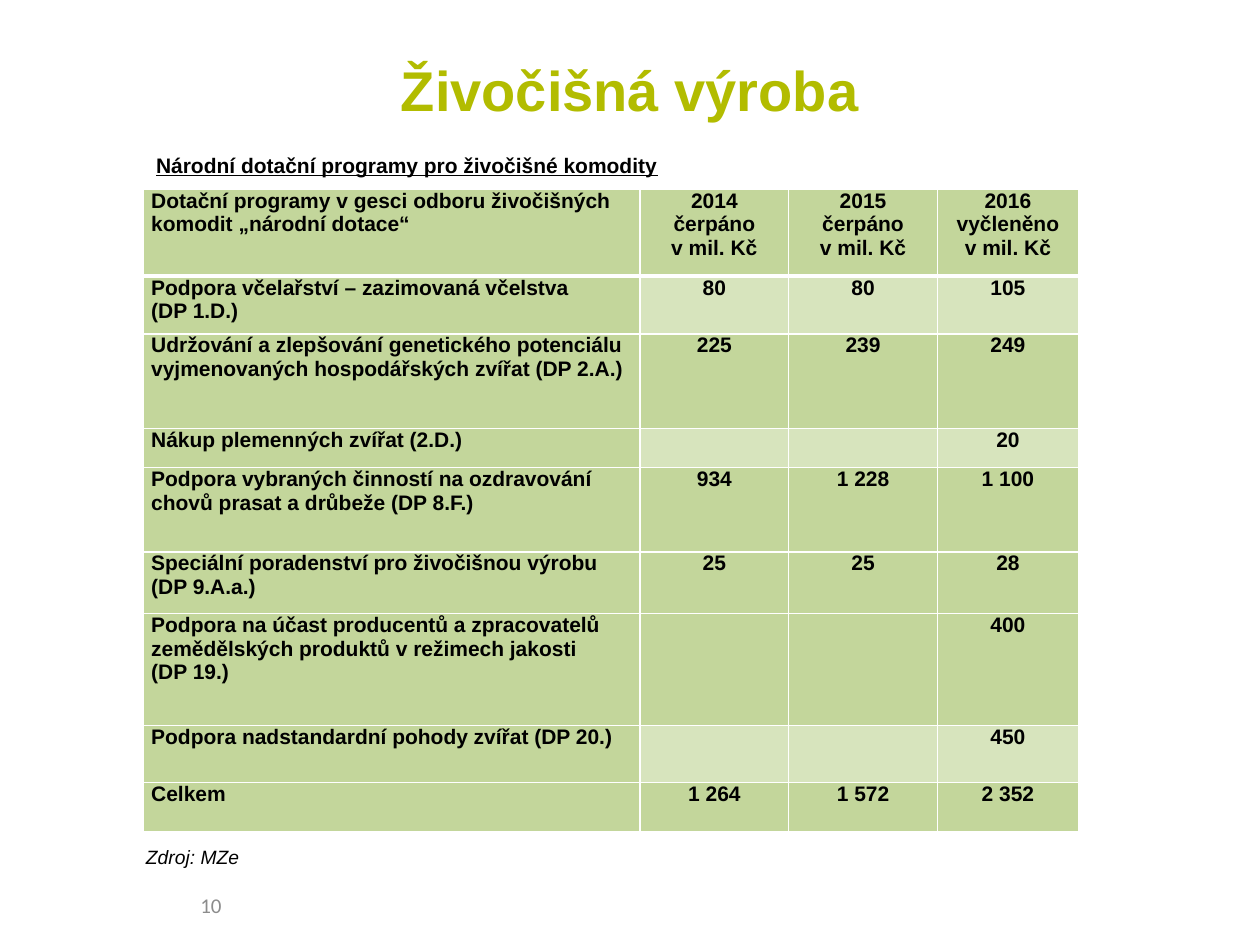
from dataclasses import dataclass

from lxml import etree
from pptx import Presentation
from pptx.dml.color import RGBColor
from pptx.enum.text import MSO_ANCHOR, PP_ALIGN
from pptx.oxml.ns import qn
from pptx.util import Inches, Pt

LEFT, CENTER = PP_ALIGN.LEFT, PP_ALIGN.CENTER
TOP, MIDDLE = MSO_ANCHOR.TOP, MSO_ANCHOR.MIDDLE

COLORS = {
    "title": "B2BC00",
    "text": "000000",
    "number": "8C8C8C",
    "green": "C3D69B",
    "pale": "D7E4BD",
    "line": "FFFFFF",
}


@dataclass
class Style:
    size: float
    color: str = "text"
    face: str = "Arial"
    bold: bool = False
    italic: bool = False
    under: bool = False


@dataclass
class Label:
    text: str
    box: tuple[float, float, float, float]
    style: Style
    align: PP_ALIGN = LEFT
    anchor: MSO_ANCHOR = MIDDLE


@dataclass
class Row:
    height: float
    cells: tuple[str, str, str, str]
    pale: bool = False


BODY = Style(12, bold=True)

LABELS = [
    Label("Živočišná výroba", (0.5, 0.3, 9, 0.82),
          Style(32, "title", bold=True), CENTER),
    Label("Národní dotační programy pro živočišné komodity",
          (1.14, 1.16, 4.41, 0.3), Style(12, bold=True, under=True)),
    Label("Zdroj: MZe", (1.06, 6.66, 1.42, 0.29),
          Style(11, italic=True), anchor=TOP),
    Label("10", (0.51, 6.98, 2.33, 0.4),
          Style(12, "number", "Calibri"), CENTER),
]

WIDTHS = [3.94, 1.18, 1.18, 1.12]
ROWS = [
    Row(0.69, ("Dotační programy v gesci odboru živočišných komodit „národní dotace“",
               "2014\nčerpáno\nv mil. Kč", "2015\nčerpáno\nv mil. Kč",
               "2016\nvyčleněno\nv mil. Kč")),
    Row(0.46, ("Podpora včelařství – zazimovaná včelstva\n(DP 1.D.)",
               "80", "80", "105"), True),
    Row(0.75, ("Udržování a zlepšování genetického potenciálu "
               "vyjmenovaných hospodářských zvířat (DP 2.A.)",
               "225", "239", "249")),
    Row(0.31, ("Nákup plemenných zvířat (2.D.)", "", "", "20"), True),
    Row(0.67, ("Podpora vybraných činností na ozdravování chovů "
               "prasat a drůbeže (DP 8.F.)", "934", "1 228", "1 100")),
    Row(0.49, ("Speciální poradenství pro živočišnou výrobu\n(DP 9.A.a.)",
               "25", "25", "28")),
    Row(0.89, ("Podpora na účast producentů a zpracovatelů zemědělských "
               "produktů v režimech jakosti\n(DP 19.)", "", "", "400")),
    Row(0.45, ("Podpora nadstandardní pohody zvířat (DP 20.)",
               "", "", "450"), True),
    Row(0.39, ("Celkem", "1 264", "1 572", "2 352")),
]


def style_font(font, style: Style) -> None:
    font.size = Pt(style.size)
    font.name = style.face
    font.bold = style.bold
    font.italic = style.italic
    font.underline = style.under
    font.color.rgb = RGBColor.from_string(COLORS[style.color])


def write(frame, text: str, style: Style, align: PP_ALIGN) -> None:
    frame.word_wrap = True
    for i, line in enumerate(text.split("\n")):
        para = frame.add_paragraph() if i else frame.paragraphs[0]
        para.alignment = align
        if line:
            run = para.add_run()
            run.text = line
            style_font(run.font, style)
        else:
            # An empty cell keeps the body size so its row does not grow
            end = etree.SubElement(para._p, qn("a:endParaRPr"))
            end.set("sz", str(int(style.size * 100)))


def add_label(slide, label: Label) -> None:
    box = slide.shapes.add_textbox(*map(Inches, label.box))
    box.text_frame.vertical_anchor = label.anchor
    write(box.text_frame, label.text, label.style, label.align)


def add_edges(cell, base: float, top: float) -> None:
    props = cell._tc.get_or_add_tcPr()
    widths = {"lnL": 1, "lnR": 1, "lnT": top, "lnB": base}
    for i, (tag, width) in enumerate(widths.items()):
        line = etree.Element(qn(f"a:{tag}"), w=str(Pt(width)))
        fill = etree.SubElement(line, qn("a:solidFill"))
        etree.SubElement(fill, qn("a:srgbClr"), val=COLORS["line"])
        props.insert(i, line)


def add_grid(slide) -> None:
    high = sum(row.height for row in ROWS)
    frame = slide.shapes.add_table(
        len(ROWS), len(WIDTHS), Inches(1.14), Inches(1.5),
        Inches(sum(WIDTHS)), Inches(high))
    table = frame.table
    for col, width in zip(table.columns, WIDTHS):
        col.width = Inches(width)
    for r, row in enumerate(ROWS):
        table.rows[r].height = Inches(row.height)
        for c, text in enumerate(row.cells):
            cell = table.cell(r, c)
            cell.margin_left = cell.margin_right = Inches(0.06)
            cell.margin_top = cell.margin_bottom = 0
            cell.vertical_anchor = TOP
            cell.fill.solid()
            shade = "pale" if row.pale and c else "green"
            cell.fill.fore_color.rgb = RGBColor.from_string(COLORS[shade])
            # A heavy rule sits below the header
            add_edges(cell, base=3 if r == 0 else 1, top=3 if r == 1 else 1)
            write(cell.text_frame, text, BODY, CENTER if c else LEFT)


def main() -> None:
    deck = Presentation()
    deck.slide_width, deck.slide_height = Inches(10), Inches(7.5)
    slide = deck.slides.add_slide(deck.slide_layouts[6])
    # Subsidy table
    add_grid(slide)
    # Title, heading, source and page number
    for label in LABELS:
        add_label(slide, label)
    deck.save("out.pptx")


if __name__ == "__main__":
    main()
